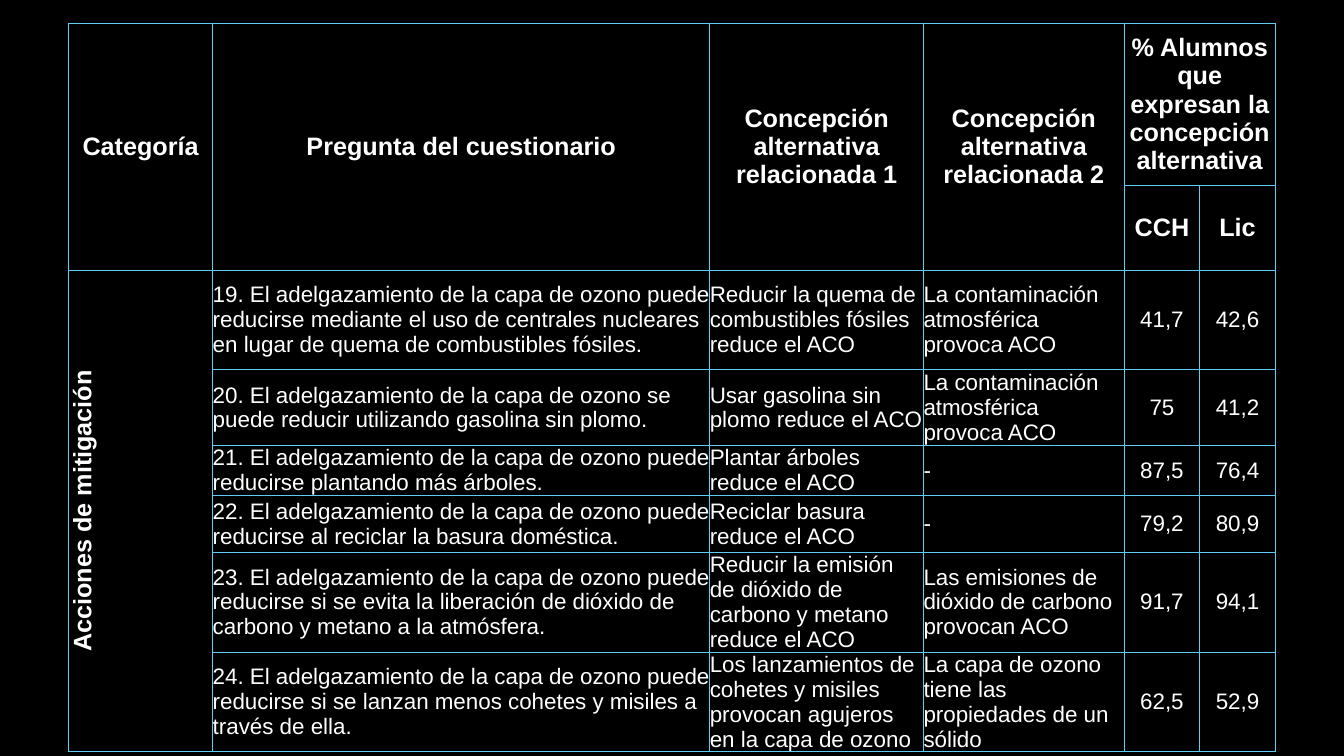
from lxml import etree
from pptx import Presentation
from pptx import util as u
from pptx.dml.color import RGBColor
from pptx.enum import text as t
from pptx.oxml.ns import qn

COLORS = {"background": "000000", "text": "FFFFFF", "border": "5ECCF3"}
COLUMN_WIDTHS = [1.43, 4.93, 2.12, 1.99, 0.75, 0.75]
ROW_HEIGHTS = [1.61, 0.84, 0.99, 0.75, 0.5, 0.56, 0.99, 0.99]
HEADINGS = [
    "Categoría",
    "Pregunta del cuestionario",
    "Concepción alternativa relacionada 1",
    "Concepción alternativa relacionada 2",
    "% Alumnos que expresan la concepción alternativa",
]
GROUPS = ["CCH", "Lic"]
CATEGORY = "Acciones de mitigación"
QUESTIONS = [
    ("19. El adelgazamiento de la capa de ozono puede reducirse mediante el uso de "
     "centrales nucleares en lugar de quema de combustibles fósiles.",
     "Reducir la quema de combustibles fósiles reduce el ACO",
     "La contaminación atmosférica provoca ACO", "41,7", "42,6"),
    ("20. El adelgazamiento de la capa de ozono se puede reducir utilizando "
     "gasolina sin plomo.",
     "Usar gasolina sin plomo reduce el ACO",
     "La contaminación atmosférica provoca ACO", "75", "41,2"),
    ("21. El adelgazamiento de la capa de ozono puede reducirse plantando más árboles.",
     "Plantar árboles reduce el ACO", "-", "87,5", "76,4"),
    ("22. El adelgazamiento de la capa de ozono puede reducirse al reciclar la "
     "basura doméstica.",
     "Reciclar basura reduce el ACO", "-", "79,2", "80,9"),
    ("23. El adelgazamiento de la capa de ozono puede reducirse si se evita la "
     "liberación de dióxido de carbono y metano a la atmósfera.",
     "Reducir la emisión de dióxido de carbono y metano reduce el ACO",
     "Las emisiones de dióxido de carbono provocan ACO", "91,7", "94,1"),
    ("24. El adelgazamiento de la capa de ozono puede reducirse si se lanzan menos "
     "cohetes y misiles a través de ella.",
     "Los lanzamientos de cohetes y misiles provocan agujeros en la capa de ozono",
     "La capa de ozono tiene las propiedades de un sólido", "62,5", "52,9"),
]
CELL_FORMAT = {
    "margin_left": 0, "margin_right": 0, "margin_top": 0, "margin_bottom": 0,
    "vertical_anchor": t.MSO_ANCHOR.MIDDLE,
}
HEADING_FONT = {"name": "Arial", "size": u.Pt(18), "bold": True}
BODY_FONT = {"name": "Arial", "size": u.Pt(16), "bold": False}


def apply_format(target, values):
    for name, value in values.items():
        setattr(target, name, value)


def paint(fill, color):
    fill.solid()
    fill.fore_color.rgb = RGBColor.from_string(COLORS[color])


def style_cell(cell):
    """Set the margins, anchor, borders and fill of a cell."""
    apply_format(cell, CELL_FORMAT)
    properties = cell._tc.get_or_add_tcPr()
    for side in ("lnL", "lnR", "lnT", "lnB"):
        line = etree.SubElement(properties, qn(f"a:{side}"), w=str(u.Pt(1)))
        solid = etree.SubElement(line, qn("a:solidFill"))
        etree.SubElement(solid, qn("a:srgbClr"), val=COLORS["border"])
    paint(cell.fill, "background")


def write_cell(cell, words, font, centered=True):
    para = cell.text_frame.paragraphs[0]
    para.alignment = t.PP_ALIGN.CENTER if centered else t.PP_ALIGN.LEFT
    span = para.add_run()
    span.text = words
    apply_format(span.font, font)
    span.font.color.rgb = RGBColor.from_string(COLORS["text"])


def fill_header(table):
    for column, heading in enumerate(HEADINGS):
        cell = table.cell(0, column)
        last = column == len(HEADINGS) - 1
        cell.merge(table.cell(0, column + 1) if last else table.cell(1, column))
        write_cell(cell, heading, HEADING_FONT)
    for column, group in enumerate(GROUPS, start=4):
        write_cell(table.cell(1, column), group, HEADING_FONT)


def fill_body(table):
    category = table.cell(2, 0)
    category.merge(table.cell(len(ROW_HEIGHTS) - 1, 0))
    category._tc.get_or_add_tcPr().set("vert", "vert270")
    write_cell(category, CATEGORY, HEADING_FONT)
    for row, question in enumerate(QUESTIONS, start=2):
        for column, words in enumerate(question, start=1):
            write_cell(table.cell(row, column), words, BODY_FONT, column >= 4)


def add_survey_table(page, left, top):
    frame = page.shapes.add_table(
        len(ROW_HEIGHTS), len(COLUMN_WIDTHS), u.Inches(left), u.Inches(top),
        u.Inches(sum(COLUMN_WIDTHS)), u.Inches(sum(ROW_HEIGHTS)))
    table = frame.table
    apply_format(table, {"first_row": False, "horz_banding": False})
    for column, width in zip(table.columns, COLUMN_WIDTHS):
        column.width = u.Inches(width)
    for row, height in zip(table.rows, ROW_HEIGHTS):
        row.height = u.Inches(height)
    for cell in table.iter_cells():
        style_cell(cell)
    fill_header(table)
    fill_body(table)


def main():
    deck = Presentation()
    deck.slide_width, deck.slide_height = u.Inches(13.33), u.Inches(7.5)
    page = deck.slides.add_slide(deck.slide_layouts[6])
    paint(page.background.fill, "background")
    add_survey_table(page, 0.68, 0.23)
    deck.save("out.pptx")


if __name__ == "__main__":
    main()
